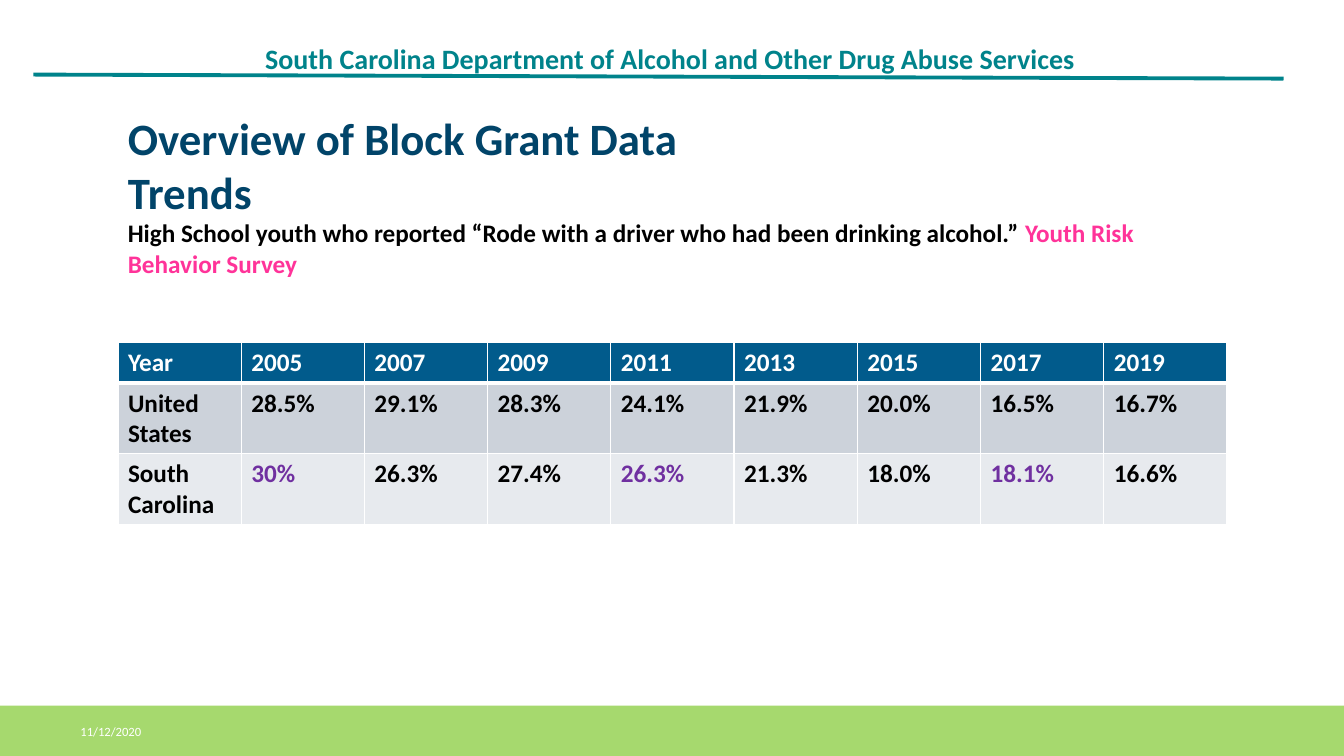
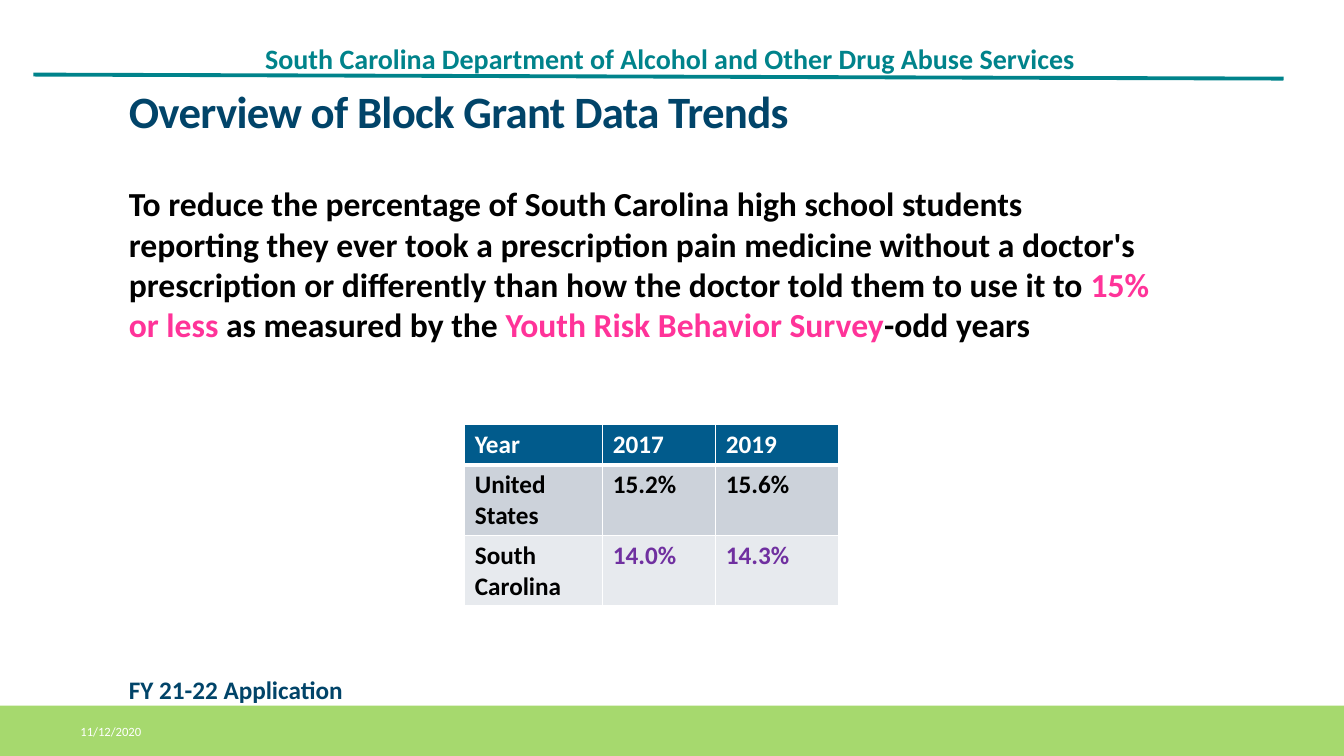
from lxml import etree
from pptx import Presentation
from pptx import util as u
from pptx.dml.color import RGBColor
from pptx.enum import shapes, text
from pptx.oxml import ns

FONT = "Calibri"
TEAL, NAVY, HEADER_BLUE, GREEN = "00838B", "014469", "015B8C", "A6D96E"
PINK, PURPLE, BLACK, WHITE = "FF3399", "7030A0", "000000", "FFFFFF"
ROW_FILLS = [HEADER_BLUE, "CCD2DA", "E7EAEE"]
ROW_HEIGHTS = [0.4, 0.7, 0.7]
SLIDE_W, SLIDE_H = 13.33, 7.5
FOOTER_H = 0.5
TITLE = "Overview of Block Grant Data Trends"


def color(hex_code):
    return RGBColor.from_string(hex_code)


def inches(*lengths):
    return [u.Inches(length) for length in lengths]


def add_run(paragraph, words, size, hex_code, bold=True, tracking=0):
    """Add one styled run; tracking is in points."""
    run = paragraph.add_run()
    run.text = words
    run.font.name = FONT
    run.font.size = u.Pt(size)
    run.font.bold = bold
    run.font.color.rgb = color(hex_code)
    if tracking:
        run._r.get_or_add_rPr().set("spc", str(round(tracking * 100)))


def add_text(slide, box, runs, size, bold=True, middle=False, spacing=None,
             tracking=0, margins=(0.1, 0.05)):
    """Write one paragraph of (words, colour) runs in box."""
    frame = slide.shapes.add_textbox(*inches(*box)).text_frame
    frame.word_wrap = True
    frame.vertical_anchor = text.MSO_ANCHOR.MIDDLE if middle else text.MSO_ANCHOR.TOP
    frame.margin_left = frame.margin_right = u.Inches(margins[0])
    frame.margin_top = frame.margin_bottom = u.Inches(margins[1])
    paragraph = frame.paragraphs[0]
    if spacing:
        paragraph.line_spacing = spacing
    for words, hex_code in runs:
        add_run(paragraph, words, size, hex_code, bold, tracking)


def add_header(slide):
    add_text(slide, (2.56, 0.28, 10.21, 0.63),
             [("South Carolina Department of Alcohol and Other Drug Abuse Services", TEAL)],
             20, middle=True, spacing=0.9, margins=(0.07, 0.04))
    rule = slide.shapes.add_connector(shapes.MSO_CONNECTOR.STRAIGHT,
                                      *inches(0.33, 0.74, 12.73, 0.78))
    rule.line.color.rgb = color(TEAL)
    rule.line.width = u.Pt(2.75)
    etree.SubElement(rule._element.spPr, ns.qn("a:effectLst"))


def add_footer(slide):
    top = SLIDE_H - FOOTER_H
    band = slide.shapes.add_shape(shapes.MSO_SHAPE.RECTANGLE,
                                  *inches(0, top, SLIDE_W, FOOTER_H))
    band.shadow.inherit = False
    band.fill.solid()
    band.fill.fore_color.rgb = color(GREEN)
    band.line.fill.background()
    add_text(slide, (0.7, top + 0.06, 2.7, 0.4), [("11/12/2020", WHITE)],
             9, bold=False, middle=True)


def set_borders(cell, top, bottom):
    """Draw white cell borders; top and bottom widths are in points."""
    properties = cell._tc.get_or_add_tcPr()
    for side, width in (("L", 1), ("R", 1), ("T", top), ("B", bottom)):
        line = etree.SubElement(properties, ns.qn(f"a:ln{side}"), w=str(u.Pt(width)))
        fill = etree.SubElement(line, ns.qn("a:solidFill"))
        etree.SubElement(fill, ns.qn("a:srgbClr"), val=WHITE)


def add_survey_table(slide, left, top, widths, rows, highlighted):
    """Add a table whose highlighted columns are purple in the state row."""
    table = slide.shapes.add_table(
        len(rows), len(widths),
        *inches(left, top, sum(widths), sum(ROW_HEIGHTS))).table
    for column, width in zip(table.columns, widths):
        column.width = u.Inches(width)
    for r, values in enumerate(rows):
        table.rows[r].height = u.Inches(ROW_HEIGHTS[r])
        for c, value in enumerate(values):
            cell = table.cell(r, c)
            set_borders(cell, top=3 if r == 1 else 1, bottom=3 if r == 0 else 1)
            cell.fill.solid()
            cell.fill.fore_color.rgb = color(ROW_FILLS[r])
            if r == 0:
                ink = WHITE
            else:
                ink = PURPLE if r == 2 and rows[0][c] in highlighted else BLACK
            add_run(cell.text_frame.paragraphs[0], value, 18, ink)


def new_slide(deck):
    """Add a blank slide with the shared header and footer."""
    slide = deck.slides.add_slide(deck.slide_layouts[6])
    add_header(slide)
    add_footer(slide)
    return slide


def add_drinking_driver_slide(deck):
    slide = new_slide(deck)
    left, width = 1.17, 11
    add_text(slide, (left, 1.05, 6.67, 0.64), [(TITLE, NAVY)], 32)
    add_text(slide, (left, 2.11, width, 0.71), [
        ("High School youth who reported “Rode with a driver who had been "
         "drinking alcohol.” ", BLACK),
        ("Youth Risk Behavior Survey", PINK)], 18)
    rows = [
        ["Year", "2005", "2007", "2009", "2011", "2013", "2015", "2017", "2019"],
        ["United States", "28.5%", "29.1%", "28.3%", "24.1%", "21.9%", "20.0%",
         "16.5%", "16.7%"],
        ["South Carolina", "30%", "26.3%", "27.4%", "26.3%", "21.3%", "18.0%",
         "18.1%", "16.6%"],
    ]
    columns = len(rows[0])
    add_survey_table(slide, left, 3.4, [width / columns] * columns, rows,
                     {"2005", "2011", "2017"})


def add_pain_medicine_slide(deck):
    slide = new_slide(deck)
    left = 1.18
    add_text(slide, (left, 0.86, 11, 0.67), [(TITLE, NAVY)], 32,
             spacing=0.85, tracking=-0.5)
    add_text(slide, (left, 1.77, 10.38, 2.59), [
        ("To reduce the percentage of South Carolina high school students "
         "reporting they ever took a prescription pain medicine without a "
         "doctor's prescription or differently than how the doctor told them "
         "to use it to ", BLACK),
        ("15% or less ", PINK),
        ("as measured by the ", BLACK),
        ("Youth Risk Behavior Survey", PINK),
        ("-odd years", BLACK)], 24)
    rows = [
        ["Year", "2017", "2019"],
        ["United States", "15.2%", "15.6%"],
        ["South Carolina", "14.0%", "14.3%"],
    ]
    add_survey_table(slide, 4.61, 4.21, [1.37, 1.12, 1.22], rows, {"2017", "2019"})
    add_text(slide, (left, 6.64, 2.5, 0.4), [("FY 21-22 Application", NAVY)], 18)


def main():
    deck = Presentation()
    deck.slide_width, deck.slide_height = inches(SLIDE_W, SLIDE_H)
    add_drinking_driver_slide(deck)
    add_pain_medicine_slide(deck)
    deck.save("out.pptx")


if __name__ == "__main__":
    main()
